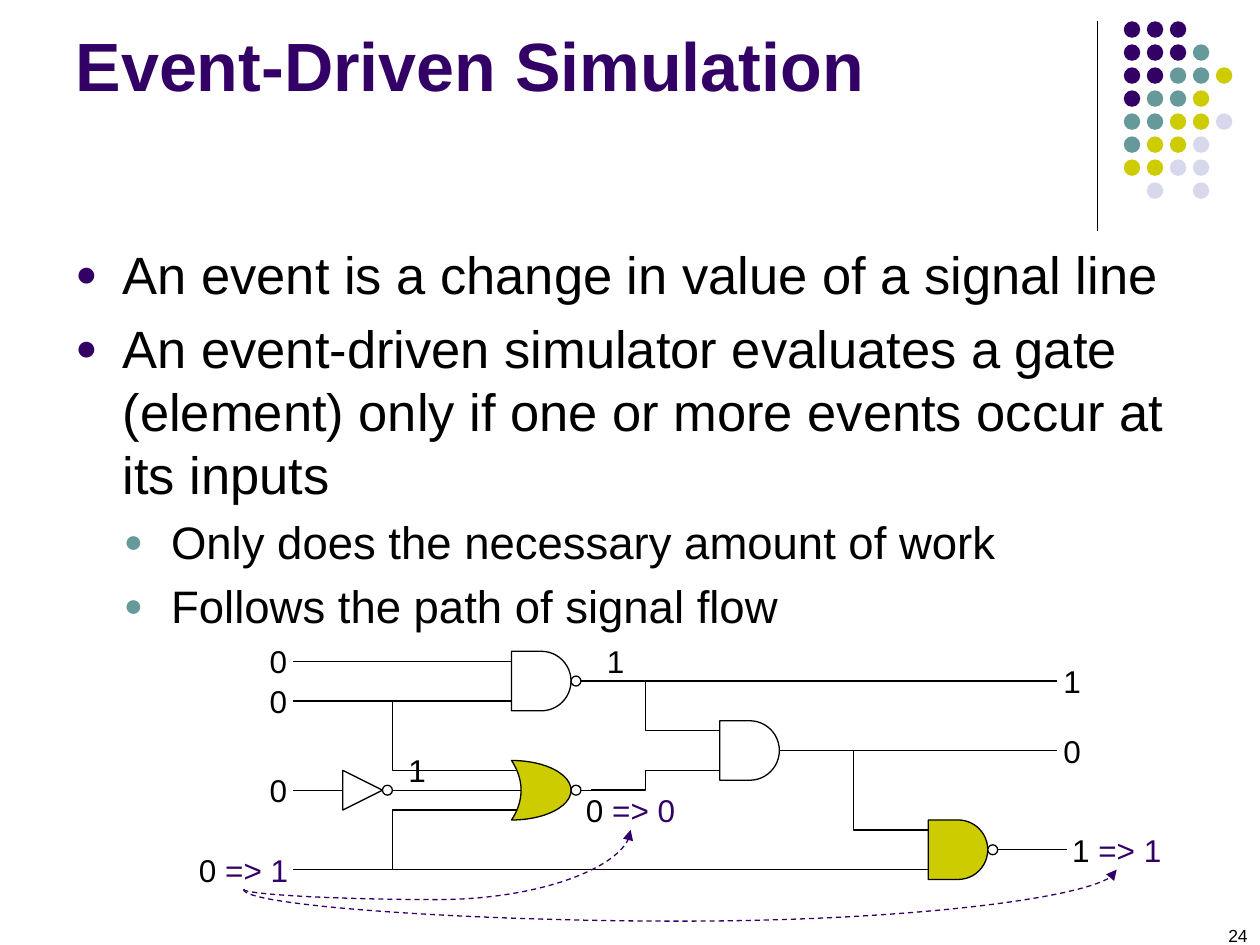
from dataclasses import dataclass
from typing import Optional
from lxml import etree
from pptx import Presentation
from pptx.dml.color import RGBColor
from pptx.enum.dml import MSO_LINE
from pptx.enum.shapes import MSO_CONNECTOR, MSO_SHAPE
from pptx.enum.text import MSO_ANCHOR, PP_ALIGN
from pptx.oxml.ns import qn
from pptx.util import Pt

STRAIGHT, ELBOW, CURVE = MSO_CONNECTOR.STRAIGHT, MSO_CONNECTOR.ELBOW, MSO_CONNECTOR.CURVE
AND, OR, NOT = MSO_SHAPE.FLOWCHART_DELAY, MSO_SHAPE.MOON, MSO_SHAPE.ISOSCELES_TRIANGLE
OVAL, BOX, DASH = MSO_SHAPE.OVAL, MSO_SHAPE.FLOWCHART_PROCESS, MSO_LINE.DASH
TOP, MIDDLE = MSO_ANCHOR.TOP, MSO_ANCHOR.MIDDLE
LEFT, CENTER, RIGHT = PP_ALIGN.LEFT, PP_ALIGN.CENTER, PP_ALIGN.RIGHT

COLORS = {"black": "000000", "white": "FFFFFF", "purple": "330066",
          "teal": "669999", "lime": "CCCC00", "pale": "D8D8EC"}
FONT = "Arial"
# The circuit lies on a grid that starts at the first gate's output level.
UNIT, GRID_X, GRID_Y = 11.34, 292.3, 389.2
DOT_ROWS = ["PPP", "PPPT", "PPTTY", "PTTY", "TTYYL", "TYYL", "YYLL", " L L"]
DOT_KEYS = {"P": "purple", "T": "teal", "Y": "lime", "L": "pale"}
DOT_X, DOT_Y, DOT_STEP, DOT_SIZE = 642.2, 12.2, 13.15, 9.4


@dataclass
class Gate:
    kind: int
    x: float
    y: float
    pins: tuple = (-1, 1)
    size: float = 3
    lead: float = 1
    bubble: bool = True
    fill: str = "white"
    turn: int = 0


@dataclass
class Label:
    x: float
    y: float
    value: str
    event: str = ""
    wire: Optional[float] = None  # far end of a wire joined to this label


@dataclass
class Bullet:
    text: str
    size: int = 30
    indent: float = 27
    color: str = "purple"


GATES = [Gate(AND, 21, 8.5, fill="lime"),
         Gate(NOT, -8.5, 5.5, pins=(0,), size=2, lead=0.5, turn=90),
         Gate(AND, 10.5, 3.5, bubble=False),
         Gate(AND, 0, 0),
         Gate(OR, 0, 5.5, pins=(-1, 0, 1), fill="lime", turn=180)]
LABELS = [Label(-12.5, -1, "0", wire=-1), Label(-12.5, 1, "0", wire=-1),
          Label(-12.5, 5.5, "0", wire=-9), Label(-16, 9.5, "0 ", "=> 1", wire=20),
          Label(27.5, 0, "1", wire=4), Label(27.5, 3.5, "0", wire=14.5),
          Label(4.5, -1, "1"), Label(-5.5, 4.5, "1"),
          Label(3.5, 6.5, "0 ", "=> 0"), Label(28, 8.5, "1 ", "=> 1", wire=25)]
BENDS = [(-11, 1, -1, 4.5), (-11, 9.5, -1, 6.5), (4, 0, 9.5, 2.5),
         (4, 5.5, 9.5, 4.5), (14.5, 3.5, 20, 7.5)]
BULLETS = [Bullet("An event is a change in value of a signal line"),
           Bullet("An event-driven simulator evaluates a gate (element) only if one "
                  "or more events occur at its inputs"),
           Bullet("Only does the necessary amount of work", 26, 54.7, "teal"),
           Bullet("Follows the path of signal flow", 26, 54.7, "teal")]


def rgb(name: str) -> RGBColor:
    return RGBColor.from_string(COLORS[name])


def style(font, size: float, color: str = "black", bold: bool = False) -> None:
    font.name, font.size, font.bold = FONT, Pt(size), bold
    font.color.rgb = rgb(color)


def grid(x: float, y: float) -> tuple:
    return Pt(GRID_X + x * UNIT), Pt(GRID_Y + y * UNIT)


def add_line(shapes, kind: int, start: tuple, end: tuple, color: str = "black"):
    line = shapes.add_connector(kind, *start, *end)
    line.line.color.rgb = rgb(color)
    line.line.width = Pt(0.75)
    etree.SubElement(line._element.spPr, qn("a:effectLst"))
    return line


def add_part(shapes, kind: int, place: tuple, size: float, fill: str):
    part = shapes.add_shape(kind, *place, Pt(size), Pt(size))
    part.shadow.inherit = False
    part.fill.solid()
    part.fill.fore_color.rgb = rgb(fill)
    part.line.color.rgb = rgb("black")
    part.line.width = Pt(0.75)
    return part


def add_gate(shapes, gate: Gate) -> None:
    group = shapes.add_group_shape().shapes
    x, y, tip = gate.x, gate.y, gate.x + gate.size
    for pin in gate.pins:
        add_line(group, STRAIGHT, grid(x - gate.lead, y + pin), grid(x + 1, y + pin))
    add_line(group, STRAIGHT, grid(tip - 1, y), grid(tip + 1, y))
    body = add_part(group, gate.kind, grid(x, y - gate.size / 2), gate.size * UNIT, gate.fill)
    body.rotation = gate.turn
    if gate.kind == OR:
        body.adjustments[0] = 0.84
    if gate.bubble:
        add_part(group, OVAL, grid(tip, y - 0.25), UNIT / 2, "white")


def add_label(shapes, label: Label) -> None:
    width = 5 if label.event else 1.5
    box = shapes.add_shape(BOX, *grid(label.x, label.y - 1), Pt(width * UNIT), Pt(2 * UNIT))
    box.shadow.inherit = False
    box.fill.background()
    box.line.fill.background()
    frame = box.text_frame
    frame.word_wrap, frame.vertical_anchor = False, MIDDLE
    frame.margin_left = frame.margin_right = frame.margin_top = frame.margin_bottom = 0
    frame.paragraphs[0].alignment = CENTER
    for text, color in ((label.value, "black"), (label.event, "purple")):
        if text:
            run = frame.paragraphs[0].add_run()
            run.text = text
            style(run.font, 18, color)
    if label.wire is not None:
        far = grid(label.wire, label.y)
        wire = add_line(shapes, STRAIGHT, far, far)
        if label.wire > label.x:
            wire.begin_connect(box, 3)
        else:
            wire.end_connect(box, 1)


def add_arc(shapes, x1: float, y1: float, x2: float, y2: float, dip: float) -> None:
    """Draw a dashed arrow that leaves downwards, sags by dip and ends upwards."""
    rise, run = y1 - y2, x2 - x1
    x, y = (x1 + x2) / 2, (y1 + y2) / 2
    arc = add_line(shapes, CURVE, grid(x - rise / 2, y - run / 2),
                   grid(x + rise / 2, y + run / 2), "purple")
    arc.line.dash_style = DASH
    props = arc._element.spPr
    etree.SubElement(props.find(qn("a:ln")), qn("a:tailEnd"), type="triangle")
    for key, value in (("rot", "5400000"), ("flipH", "1"), ("flipV", "1")):
        props.find(qn("a:xfrm")).set(key, value)
    guides = props.find(qn("a:prstGeom")).find(qn("a:avLst"))
    etree.SubElement(guides, qn("a:gd"), name="adj1", fmla=f"val {round(-dip / rise * 100000)}")


def add_bullet(para, item: Bullet) -> None:
    para.text = item.text
    para.space_before = Pt(item.size * 0.2)
    style(para.font, item.size)
    props = para._p.get_or_add_pPr()
    props.set("marL", str(Pt(item.indent)))
    props.set("indent", str(-Pt(27)))
    color = etree.SubElement(props, qn("a:buClr"))
    etree.SubElement(color, qn("a:srgbClr"), val=COLORS[item.color])
    for tag, key, value in (("a:buSzPct", "val", "70000"), ("a:buFont", "typeface", FONT),
                            ("a:buChar", "char", "●")):
        etree.SubElement(props, qn(tag)).set(key, value)
    props.append(props.find(qn("a:defRPr")))


def add_dots(shapes) -> None:
    group = shapes.add_group_shape().shapes
    for row, keys in enumerate(DOT_ROWS):
        for col, key in enumerate(keys):
            if key in DOT_KEYS:
                place = Pt(DOT_X + col * DOT_STEP), Pt(DOT_Y + row * DOT_STEP)
                add_part(group, OVAL, place, DOT_SIZE, DOT_KEYS[key]).line.fill.background()


deck = Presentation()
deck.slide_width, deck.slide_height = Pt(720), Pt(540)
shapes = deck.slides.add_slide(deck.slide_layouts[5]).shapes
title = shapes.title
title.left, title.top, title.width, title.height = Pt(36), Pt(9.4), Pt(594), Pt(102)
title.text_frame.text = "Event-Driven Simulation"
title.text_frame.vertical_anchor = TOP
title.text_frame.paragraphs[0].alignment = LEFT
style(title.text_frame.paragraphs[0].font, 39, "purple", bold=True)
add_line(shapes, STRAIGHT, (Pt(627), Pt(12)), (Pt(627), Pt(132)))
add_dots(shapes)
number = shapes.add_textbox(Pt(552), Pt(525), Pt(168), Pt(15)).text_frame
number.word_wrap, number.text = True, "24"
number.paragraphs[0].alignment = RIGHT
style(number.paragraphs[0].font, 10)
body = shapes.add_textbox(Pt(36), Pt(135), Pt(648), Pt(347)).text_frame
body.word_wrap = True
for i, item in enumerate(BULLETS):
    add_bullet(body.add_paragraph() if i else body.paragraphs[0], item)
for gate in GATES:
    add_gate(shapes, gate)
for label in LABELS:
    add_label(shapes, label)
add_line(shapes, STRAIGHT, grid(-5.5, 5.5), grid(-1, 5.5))
for x1, y1, x2, y2 in BENDS:
    add_line(shapes, ELBOW, grid(x1, y1), grid(x2, y2))
add_arc(shapes, -13.5, 10.5, 30.5, 9.5, dip=1.6)
add_arc(shapes, -13.5, 10.5, 6, 7.5, dip=0.52)
deck.save("out.pptx")
